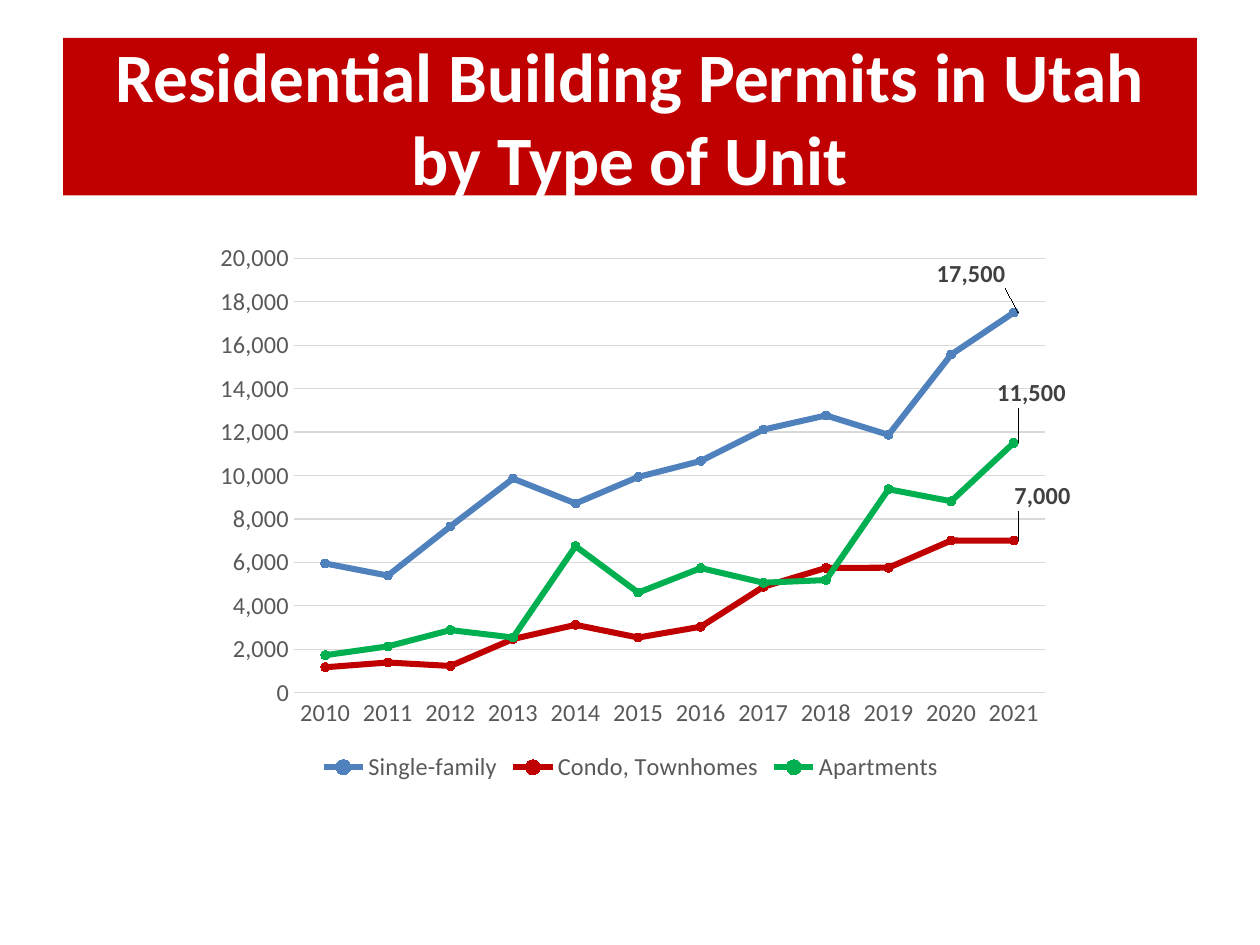
from pptx import Presentation
from pptx.chart.data import CategoryChartData
from pptx.dml.color import RGBColor
from pptx.enum.chart import (XL_CHART_TYPE, XL_LABEL_POSITION, XL_LEGEND_POSITION,
                             XL_MARKER_STYLE, XL_TICK_MARK)
from pptx.enum.text import MSO_ANCHOR, MSO_AUTO_SIZE, PP_ALIGN
from pptx.oxml import parse_xml
from pptx.util import Inches, Pt

RED = RGBColor(0xC0, 0x00, 0x00)
BLUE = RGBColor(0x4F, 0x81, 0xBD)
GREEN = RGBColor(0x00, 0xB0, 0x50)
WHITE = RGBColor(0xFF, 0xFF, 0xFF)
TEXT_GRAY = RGBColor(0x59, 0x59, 0x59)
LABEL_GRAY = RGBColor(0x40, 0x40, 0x40)
GRID_GRAY = RGBColor(0xD9, 0xD9, 0xD9)
FONT = "Calibri"
CHART_NS = "http://schemas.openxmlformats.org/drawingml/2006/chart"

YEARS = [str(year) for year in range(2010, 2022)]
# Name, colour, shift of the last label (share of chart size), permits per year
PERMITS = [
    ("Single-family", BLUE, (-0.1, -0.07),
     [5947, 5389, 7655, 9857, 8712, 9933, 10668, 12113, 12766, 11872, 15568, 17500]),
    ("Condo, Townhomes", RED, (-0.01, -0.08),
     [1169, 1388, 1228, 2469, 3122, 2536, 3034, 4874, 5741, 5752, 7004, 7000]),
    ("Apartments", GREEN, (-0.03, -0.09),
     [1723, 2130, 2880, 2539, 6742, 4607, 5735, 5061, 5185, 9366, 8816, 11500]),
]


def style_font(font, size, color, bold=False):
    font.name = FONT
    font.size = Pt(size)
    font.bold = bold
    font.color.rgb = color


def manual_layout(**settings):
    """Build a chart layout element from its settings, in schema order."""
    parts = "".join(f'<c:{key} val="{value}"/>' for key, value in settings.items())
    return parse_xml(f'<c:layout xmlns:c="{CHART_NS}"><c:manualLayout>{parts}'
                     '</c:manualLayout></c:layout>')


def add_title(page, box, text):
    title = page.shapes.title
    title.left, title.top, title.width, title.height = box
    title.fill.solid()
    title.fill.fore_color.rgb = RED
    frame = title.text_frame
    frame.word_wrap = True
    frame.auto_size = MSO_AUTO_SIZE.NONE
    frame.vertical_anchor = MSO_ANCHOR.MIDDLE
    para = frame.paragraphs[0]
    para.alignment = PP_ALIGN.CENTER
    span = para.add_run()
    span.text = text
    style_font(span.font, 39.6, WHITE, bold=True)


def label_last_point(series, shift):
    """Show the last value, moved off its point and tied to it by a leader line."""
    series.data_labels.show_value = False
    label = series.points[len(YEARS) - 1].data_label
    style_font(label.font, 14, LABEL_GRAY, bold=True)
    label.position = XL_LABEL_POSITION.RIGHT
    labels = series.data_labels._element
    index = labels.find(f"{{{CHART_NS}}}dLbl/{{{CHART_NS}}}idx")
    index.addnext(manual_layout(x=shift[0], y=shift[1]))


def style_series(series, color, shift):
    series.smooth = False
    series.format.line.color.rgb = color
    series.format.line.width = Pt(3.5)
    marker = series.marker
    marker.style = XL_MARKER_STYLE.CIRCLE
    marker.size = 5
    marker.format.fill.solid()
    marker.format.fill.fore_color.rgb = color
    marker.format.line.color.rgb = color
    label_last_point(series, shift)


def style_axes(chart):
    years, counts = chart.category_axis, chart.value_axis
    for axis in (years, counts):
        axis.major_tick_mark = axis.minor_tick_mark = XL_TICK_MARK.NONE
        style_font(axis.tick_labels.font, 14, TEXT_GRAY)
    counts.minimum_scale, counts.maximum_scale, counts.major_unit = 0, 20000, 2000
    counts.tick_labels.number_format = "#,##0"
    counts.tick_labels.number_format_is_linked = False
    counts.has_major_gridlines = True
    counts.format.line.fill.background()
    for line in (years.format.line, counts.major_gridlines.format.line):
        line.color.rgb = GRID_GRAY
        line.width = Pt(0.75)


def add_permit_chart(page, box):
    data = CategoryChartData(number_format="#,##0")
    data.categories = YEARS
    for name, _, _, values in PERMITS:
        data.add_series(name, values)
    chart = page.shapes.add_chart(XL_CHART_TYPE.LINE_MARKERS, *box, data).chart
    chart.has_title = False
    chart.font.name = FONT
    chart.font.size = Pt(14)
    style_axes(chart)

    # Lines and their last labels
    plot = chart.plots[0]
    plot.vary_by_categories = False
    for series, (_, color, shift, _) in zip(plot.series, PERMITS):
        style_series(series, color, shift)

    # Legend
    chart.has_legend = True
    chart.legend.position = XL_LEGEND_POSITION.BOTTOM
    chart.legend.include_in_layout = False
    style_font(chart.legend.font, 14, TEXT_GRAY)

    # Inner plot area
    area = chart._chartSpace.chart.plotArea
    for layout in area.findall(f"{{{CHART_NS}}}layout"):
        area.remove(layout)
    area.insert(0, manual_layout(layoutTarget="inner", xMode="edge", yMode="edge",
                                 x=0.11, y=0.05, w=0.87, h=0.78))


def main():
    deck = Presentation()
    deck.slide_width, deck.slide_height = Inches(10), Inches(7.5)
    page = deck.slides.add_slide(deck.slide_layouts[5])
    add_title(page, (Inches(0.5), Inches(0.3), Inches(9), Inches(1.25)),
              "Residential Building Permits in Utah by Type of Unit")
    add_permit_chart(page, (Inches(1.58), Inches(1.83), Inches(6.92), Inches(4.42)))
    deck.save("out.pptx")


if __name__ == "__main__":
    main()
